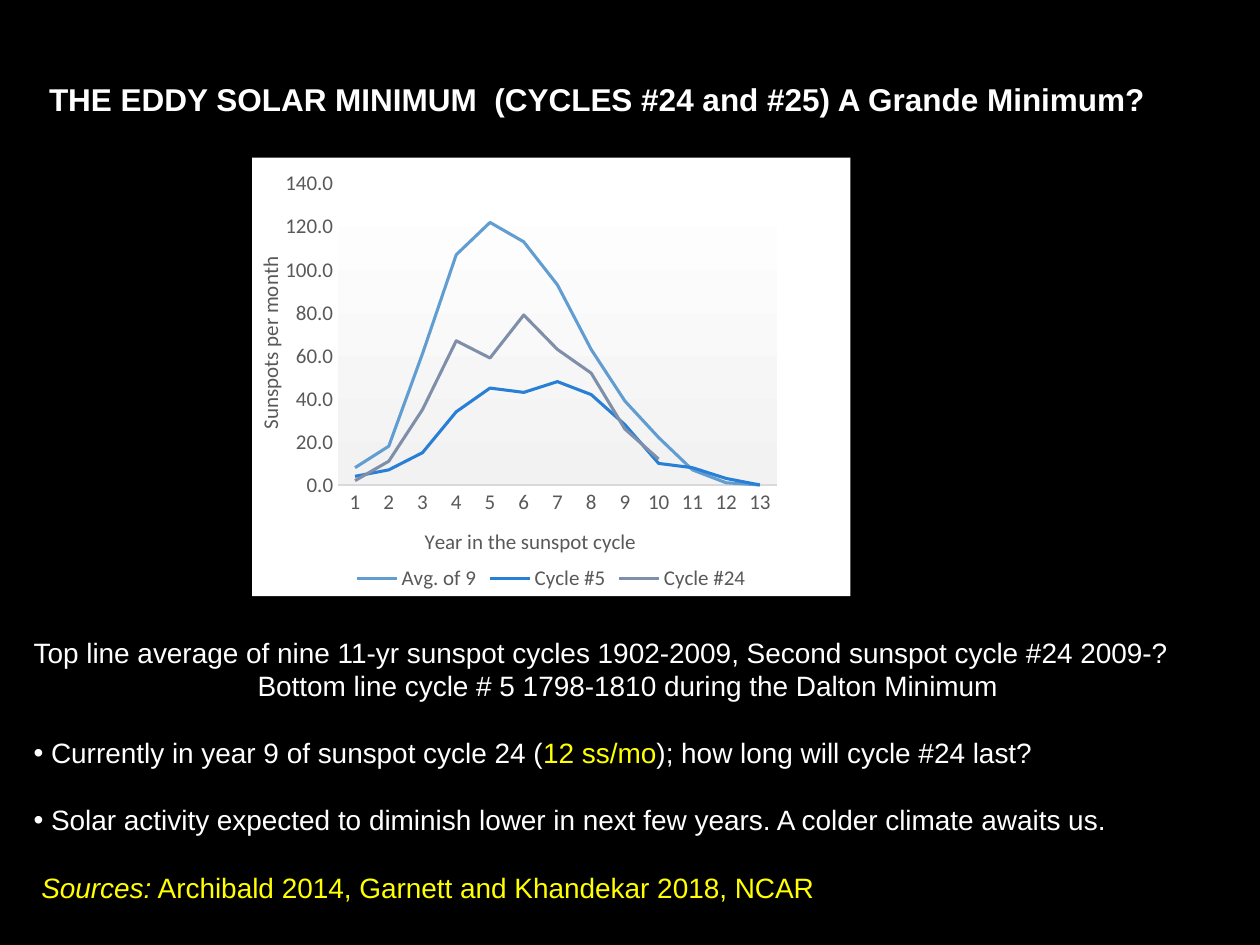
"""Build a slide on the Eddy solar minimum with a sunspot line chart."""
from dataclasses import dataclass

from pptx import Presentation
from pptx.chart.data import CategoryChartData
from pptx.dml.color import RGBColor
from pptx.enum.chart import XL_CHART_TYPE, XL_LEGEND_POSITION, XL_TICK_MARK
from pptx.enum.text import MSO_ANCHOR, MSO_AUTO_SIZE, PP_ALIGN
from pptx.oxml import parse_xml
from pptx.oxml.ns import nsdecls, qn
from pptx.util import Pt

LINE = XL_CHART_TYPE.LINE
BOTTOM = XL_LEGEND_POSITION.BOTTOM
NO_TICK = XL_TICK_MARK.NONE
TOP = MSO_ANCHOR.TOP
NO_FIT = MSO_AUTO_SIZE.NONE
LEFT = PP_ALIGN.LEFT

HUES = {
    "black": "000000", "white": "FFFFFF", "yellow": "FFFF00",
    "gray": "595959", "rule": "D9D9D9", "shade": "F2F2F2",
    "sky": "629DD1", "blue": "297FD5", "slate": "7F8FA9",
}


@dataclass
class Cycle:
    name: str
    hue: str
    spots: list


@dataclass
class Run:
    text: str
    hue: str = "white"
    italic: bool = False


@dataclass
class Para:
    runs: list
    indent: float = 0
    before: float = 0
    bullet: bool = False


CYCLES = [
    Cycle("Avg. of 9", "sky", [8, 18, 61, 107, 122, 113, 93, 63, 39, 22, 7, 1, 0]),
    Cycle("Cycle #5", "blue", [4, 7, 15, 34, 45, 43, 48, 42, 28, 10, 8, 3, 0]),
    Cycle("Cycle #24", "slate", [2, 11, 35, 67, 59, 79, 63, 52, 26, 12] + [None] * 3),
]
GAP = 19.2
PARAS = [
    Para([Run("Top line average of nine 11-yr sunspot cycles 1902-2009, "
              "Second sunspot cycle #24 2009-?")]),
    Para([Run("Bottom line cycle # 5 1798-1810 during the Dalton Minimum")], 128),
    Para([Run("Currently in year 9 of sunspot cycle 24 ("),
          Run("12 ss/mo", "yellow"),
          Run("); how long will cycle #24 last?")], 10, GAP, True),
    Para([Run("Solar activity expected to diminish lower in next few years. "
              "A colder climate awaits us.")], 10, GAP, True),
    Para([Run("Sources:", "yellow", True),
          Run(" Archibald 2014, Garnett and Khandekar 2018, NCAR", "yellow")], 4.4, GAP),
]


def tint(hue: str) -> RGBColor:
    return RGBColor.from_string(HUES[hue])


def style(font, size: float, hue: str, face: str, bold=False, italic=False) -> None:
    font.size, font.name = Pt(size), face
    font.bold, font.italic = bold, italic
    font.color.rgb = tint(hue)


def write(para, text: str, *, size=16, hue="white", face="Arial", bold=False,
          italic=False) -> None:
    run = para.add_run()
    run.text = text
    style(run.font, size, hue, face, bold, italic)


def place(shape, left: float, top: float, width: float, height: float):
    shape.left, shape.top = Pt(left), Pt(top)
    shape.width, shape.height = Pt(width), Pt(height)
    frame = shape.text_frame
    frame.auto_size, frame.vertical_anchor = NO_FIT, TOP
    frame.word_wrap = True
    return frame


def fill_para(para, item: Para) -> None:
    props = para._p.get_or_add_pPr()
    props.set("marL", str(Pt(item.indent)))
    props.set("indent", str(Pt(-item.indent if item.bullet else 0)))
    mark = '<a:buChar %s char="•"/>' if item.bullet else "<a:buNone %s/>"
    props.append(parse_xml(mark % nsdecls("a")))
    para.alignment = LEFT
    para.space_before = Pt(item.before)
    para.line_spacing = 1.0
    for run in item.runs:
        write(para, run.text, hue=run.hue, italic=run.italic)


def layout(*shares: float):
    inner = '<c:layoutTarget val="inner"/>' if len(shares) == 4 else ""
    modes = '<c:xMode val="edge"/><c:yMode val="edge"/>'
    parts = "".join(f'<c:{key} val="{share / 100:.3f}"/>'
                    for key, share in zip("xywh", shares))
    return parse_xml(f'<c:layout {nsdecls("c")}><c:manualLayout>{inner}{modes}{parts}'
                     '</c:manualLayout></c:layout>')


def paint(fill: str):
    return parse_xml(f'<c:spPr {nsdecls("c", "a")}>{fill}<a:ln><a:noFill/></a:ln></c:spPr>')


def solid(hue: str) -> str:
    return f'<a:solidFill><a:srgbClr val="{HUES[hue]}"/></a:solidFill>'


def drop(node, tag: str) -> None:
    for old in node.findall(qn(tag)):
        node.remove(old)


def label(axis, text: str, x: float, y: float, turn: int = 0) -> None:
    axis.major_tick_mark = axis.minor_tick_mark = NO_TICK
    axis.has_major_gridlines = False
    style(axis.tick_labels.font, 12, "gray", "Calibri")
    frame = axis.axis_title.text_frame
    write(frame.paragraphs[0], text, size=12, hue="gray", face="Calibri")
    body = frame._txBody.find(qn("a:bodyPr"))
    body.set("rot", str(turn * 60000))
    body.set("vert", "horz")
    node = axis.axis_title._element
    drop(node, "c:layout")
    node.find(qn("c:tx")).addnext(layout(x, y))


def draw_chart(slide) -> None:
    data = CategoryChartData(number_format="0.0")
    data.categories = [str(year) for year in range(1, 14)]
    for cycle in CYCLES:
        data.add_series(cycle.name, cycle.spots)
    chart = slide.shapes.add_chart(LINE, Pt(144), Pt(90), Pt(342), Pt(250.6), data).chart
    style(chart.font, 10, "gray", "Calibri")
    chart.has_title = False
    chart.has_legend = True
    chart.legend.position = BOTTOM
    chart.legend.include_in_layout = False
    style(chart.legend.font, 12, "gray", "Calibri")
    years, spots = chart.category_axis, chart.value_axis
    label(years, "Year in the sunspot cycle", 28.2, 83.4)
    label(spots, "Sunspots per month", 0, 21.8, -90)
    years.format.line.color.rgb = tint("rule")
    years.format.line.width = Pt(0.75)
    spots.format.line.fill.background()
    spots.minimum_scale, spots.maximum_scale, spots.major_unit = 0, 140, 20
    spots.tick_labels.number_format = "0.0"
    spots.tick_labels.number_format_is_linked = False
    chart.plots[0].vary_by_categories = False
    for line, cycle in zip(chart.plots[0].series, CYCLES):
        line.smooth = False
        line.format.line.width = Pt(1.75)
        line.format.line.color.rgb = tint(cycle.hue)
    root = chart._chartSpace.find(qn("c:chart"))
    root.addnext(paint(solid("white")))
    area = root.find(qn("c:plotArea"))
    drop(area, "c:layout")
    area.insert(0, layout(14.4, 6, 73.3, 68.7))
    stops = "".join(f'<a:gs pos="{pos}"><a:srgbClr val="{HUES[hue]}"/></a:gs>'
                    for pos, hue in ((0, "white"), (100000, "shade")))
    area.append(paint(f'<a:gradFill><a:gsLst>{stops}</a:gsLst>'
                      '<a:lin ang="5400000" scaled="0"/></a:gradFill>'))


def main() -> None:
    deck = Presentation()
    deck.slide_width, deck.slide_height = Pt(720), Pt(540)
    slide = deck.slides.add_slide(deck.slide_layouts[1])
    slide.background.fill.solid()
    slide.background.fill.fore_color.rgb = tint("black")
    title, body = slide.placeholders[0], slide.placeholders[1]
    head = place(title, 12.24, 42.2, 666, 28.8)
    head.margin_left = Pt(15.8)
    head.paragraphs[0].alignment = LEFT
    write(head.paragraphs[0], "THE EDDY SOLAR MINIMUM  (CYCLES #24 and #25) "
          "A Grande Minimum?", size=18, bold=True)
    draw_chart(slide)
    frame = place(body, 12, 359.3, 708, 162.7)
    for index, item in enumerate(PARAS):
        fill_para(frame.add_paragraph() if index else frame.paragraphs[0], item)
    deck.save("out.pptx")


if __name__ == "__main__":
    main()
